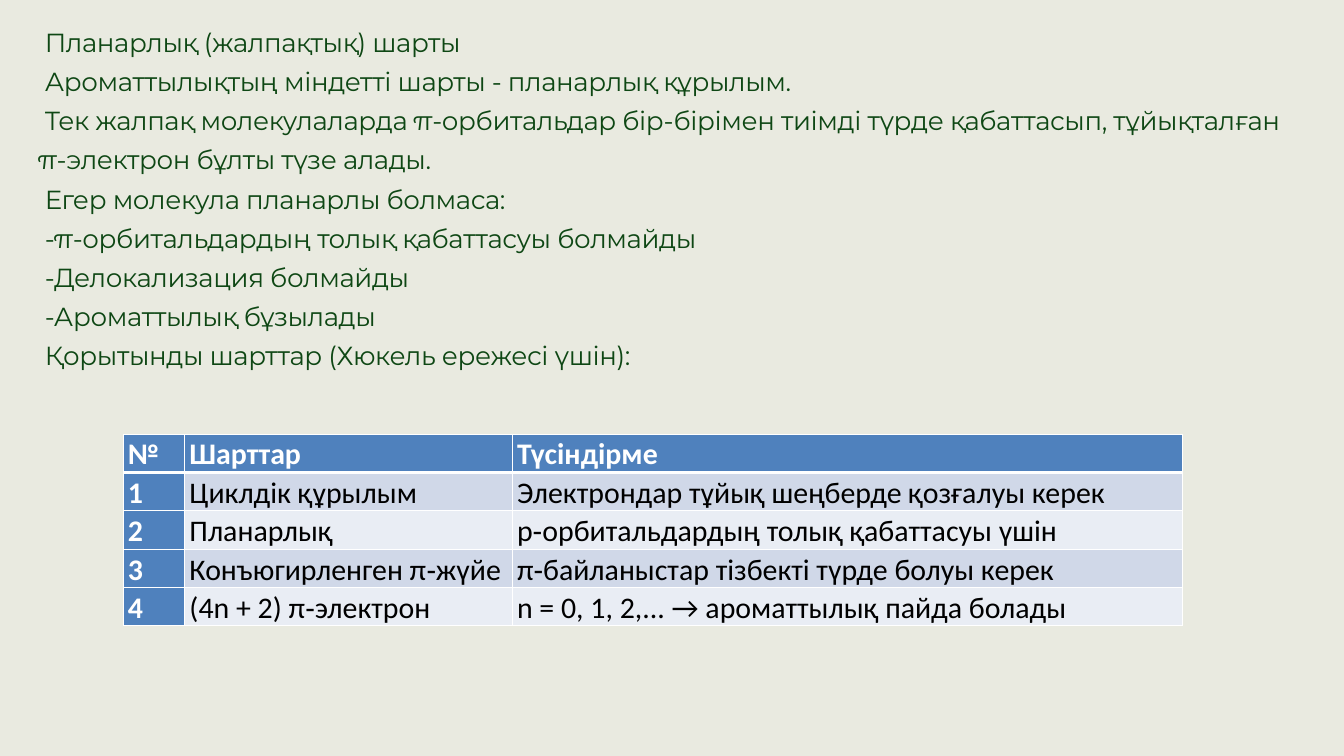
from lxml.etree import SubElement
from pptx import Presentation
from pptx.dml.color import RGBColor
from pptx.enum.text import MSO_AUTO_SIZE as AutoSize, MSO_VERTICAL_ANCHOR as Anchor, PP_ALIGN as Align
from pptx.oxml.ns import qn
from pptx.util import Pt

CONDITIONS = [
    "Планарлық (жалпақтық) шарты",
    "Ароматтылықтың міндетті шарты - планарлық құрылым.",
    "Тек жалпақ молекулаларда π‑орбитальдар бір-бірімен тиімді түрде қабаттасып, "
    "тұйықталған π‑электрон бұлты түзе алады.",
    "Егер молекула планарлы болмаса:",
    "-π‑орбитальдардың толық қабаттасуы болмайды",
    "-Делокализация болмайды",
    "-Ароматтылық бұзылады",
    "Қорытынды шарттар (Хюкель ережесі үшін):",
]

RULES = [
    ("№", "Шарттар", "Түсіндірме"),
    ("1", "Циклдік құрылым", "Электрондар тұйық шеңберде қозғалуы керек"),
    ("2", "Планарлық", "p‑орбитальдардың толық қабаттасуы үшін"),
    ("3", "Конъюгирленген π‑жүйе", "π‑байланыстар тізбекті түрде болуы керек"),
    ("4", "(4n + 2) π‑электрон", "n = 0, 1, 2,... → ароматтылық пайда болады"),
]


def color(value):
    return RGBColor.from_string(value)


class SlideBuilder:
    background = "E9EAE0"
    text_color = "0E4714"
    accent = "4F81BD"
    bands = ("D0D8E8", "E9EDF4")
    white = "FFFFFF"
    black = "000000"
    text_font = "Montserrat"
    table_font = "Calibri"

    def __init__(self, presentation):
        self.slide = presentation.slides.add_slide(presentation.slide_layouts[1])
        title = self.slide.shapes.title
        title.element.getparent().remove(title.element)
        fill = self.slide.background.fill
        fill.solid()
        fill.fore_color.rgb = color(self.background)

    def format_runs(self, paragraph, font, size, hex_color, bold=False):
        for run in paragraph.runs:
            run.font.name = font
            run.font.size = Pt(size)
            run.font.bold = bold
            run.font.color.rgb = color(hex_color)

    def body(self, lines, left, top, width, height):
        shape = self.slide.placeholders[1]
        shape.left, shape.top = Pt(left), Pt(top)
        shape.width, shape.height = Pt(width), Pt(height)
        frame = shape.text_frame
        frame.margin_left = frame.margin_top = frame.margin_right = frame.margin_bottom = 0
        frame.vertical_anchor = Anchor.TOP
        frame.word_wrap = True
        frame.auto_size = AutoSize.SHAPE_TO_FIT_TEXT
        frame.text = "\n".join(lines)
        for paragraph in frame.paragraphs:
            paragraph.alignment = Align.LEFT
            paragraph.line_spacing = Pt(42)
            paragraph.space_before = paragraph.space_after = Pt(0)
            properties = paragraph._p.get_or_add_pPr()
            properties.set("marL", "0")
            properties.set("indent", str(Pt(7)))
            SubElement(properties, qn("a:buNone"))
            self.format_runs(paragraph, self.text_font, 28, self.text_color)
            for run in paragraph.runs:
                run.font._element.set("spc", "-40")

    def border(self, cell, side, width):
        line = SubElement(cell._tc.get_or_add_tcPr(), qn(f"a:ln{side}"), w=str(Pt(width)))
        fill = SubElement(line, qn("a:solidFill"))
        SubElement(fill, qn("a:srgbClr"), val=self.white)

    def cell(self, cell, text, row, column):
        heading = row == 0 or column == 0
        cell.margin_left = cell.margin_right = Pt(5)
        cell.margin_top = cell.margin_bottom = 0
        widths = {"L": 1, "R": 1, "T": 3 if row == 1 else 1, "B": 3 if row == 0 else 1}
        for side, width in widths.items():
            self.border(cell, side, width)
        cell.fill.solid()
        cell.fill.fore_color.rgb = color(self.accent if heading else self.bands[(row - 1) % 2])
        cell.text_frame.text = text
        paragraph = cell.text_frame.paragraphs[0]
        paragraph.line_spacing = 1.07
        self.format_runs(paragraph, self.table_font, 32, self.white if heading else self.black, heading)

    def table(self, rows, left, top, column_widths, row_height):
        table = self.slide.shapes.add_table(
            len(rows), len(column_widths), Pt(left), Pt(top),
            Pt(sum(column_widths)), Pt(row_height * len(rows)),
        ).table
        for column, width in zip(table.columns, column_widths):
            column.width = Pt(width)
        for row, texts in enumerate(rows):
            for column, text in enumerate(texts):
                self.cell(table.cell(row, column), text, row, column)


def main():
    presentation = Presentation()
    presentation.slide_width, presentation.slide_height = Pt(1440), Pt(810)
    builder = SlideBuilder(presentation)
    builder.body(CONDITIONS, 41, 19.5, 1333.5, 411)
    builder.table(RULES, 132, 465, (66, 351, 718), 41)
    presentation.save("out.pptx")


if __name__ == "__main__":
    main()
